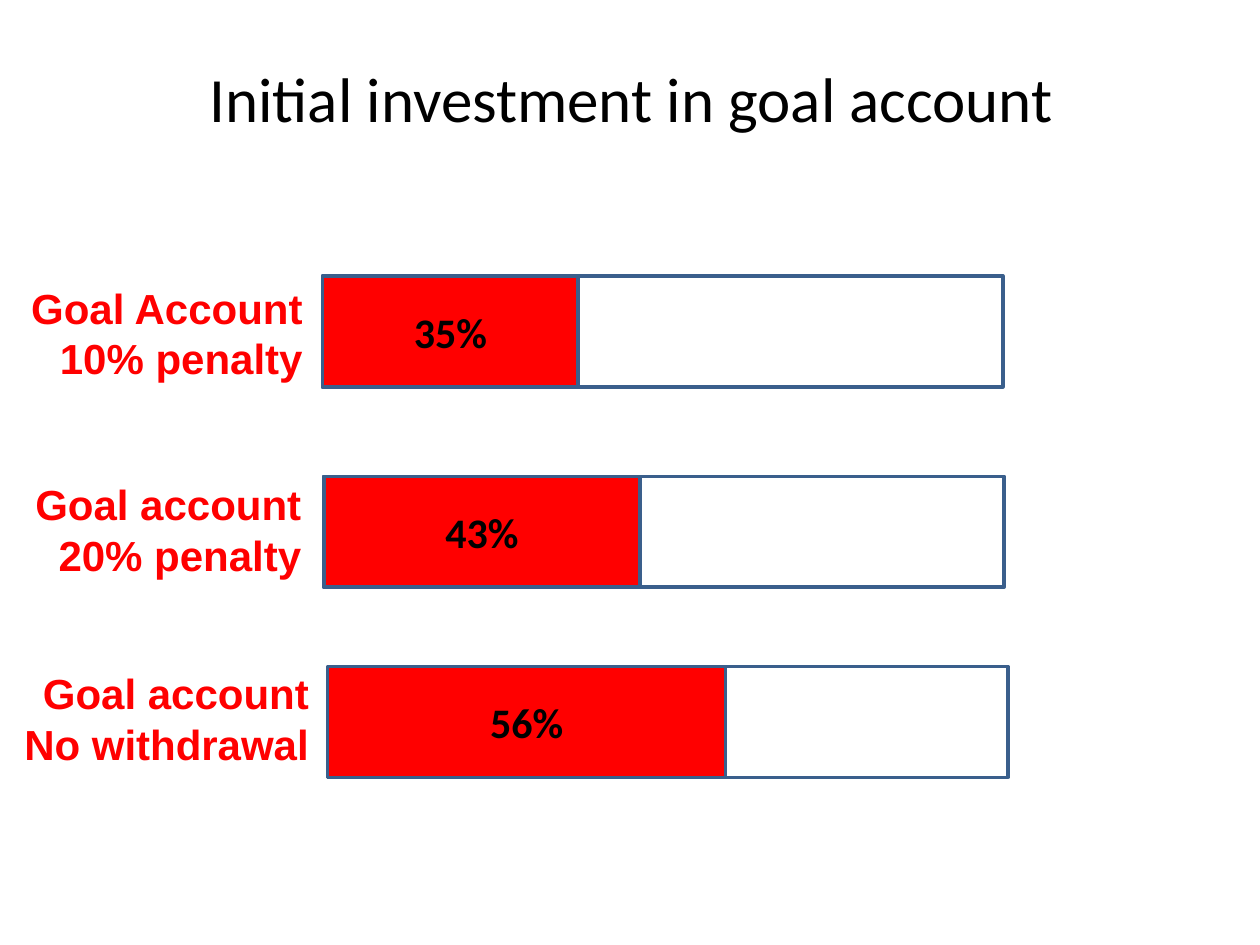
from pptx import Presentation
from pptx.dml.color import RGBColor
from pptx.enum.shapes import MSO_SHAPE as Shape
from pptx.enum.text import MSO_ANCHOR as Anchor, PP_ALIGN as Align
from pptx.util import Inches, Pt

BLACK = RGBColor(0x00, 0x00, 0x00)
RED = RGBColor(0xFF, 0x00, 0x00)
OUTLINE = RGBColor(0x3A, 0x5F, 0x8C)

BAR_WIDTH, BAR_HEIGHT = 5.4, 0.88
LABEL_HEIGHT = 0.91

TITLE_FONT = {"name": "Calibri", "size": Pt(36), "bold": False}
LABEL_FONT = {"name": "Arial", "size": Pt(24), "bold": True}
SHARE_FONT = {"name": "Calibri", "size": Pt(24), "bold": True}

# label lines, label (left, top, width), bar (left, top), share, share width
ACCOUNTS = [
    (["Goal Account", "10% penalty"], (-0.21, 2.19, 2.71), (2.56, 2.19), "35%", 2.03),
    (["Goal account", "20% penalty"], (0.16, 3.75, 2.33), (2.57, 3.78), "43%", 2.51),
    (["Goal account", "No withdrawal"], (0.07, 5.25, 2.48), (2.6, 5.29), "56%", 3.16),
]


def write(frame, lines, font_format, color, align, anchor):
    frame.word_wrap = True
    frame.vertical_anchor = anchor
    for index, line in enumerate(lines):
        paragraph = frame.add_paragraph() if index else frame.paragraphs[0]
        paragraph.alignment = align
        run = paragraph.add_run()
        run.text = line
        for attribute, value in font_format.items():
            setattr(run.font, attribute, value)
        run.font.color.rgb = color


def add_text(slide, box, *text_format):
    frame = slide.shapes.add_textbox(*map(Inches, box)).text_frame
    write(frame, *text_format)


def add_bar(slide, left, top, width, fill=None):
    """Add an outlined bar, hollow unless a fill colour is given."""
    bar = slide.shapes.add_shape(
        Shape.RECTANGLE, *map(Inches, (left, top, width, BAR_HEIGHT)))
    bar.shadow.inherit = False
    bar.line.color.rgb = OUTLINE
    bar.line.width = Pt(2)
    if fill is None:
        bar.fill.background()
    else:
        bar.fill.solid()
        bar.fill.fore_color.rgb = fill
    return bar


def add_account(slide, label, label_box, bar_at, share, share_width):
    add_text(slide, (*label_box, LABEL_HEIGHT), label, LABEL_FONT, RED,
             Align.RIGHT, Anchor.TOP)
    add_bar(slide, *bar_at, BAR_WIDTH)
    share_bar = add_bar(slide, *bar_at, share_width, RED)
    write(share_bar.text_frame, [share], SHARE_FONT, BLACK,
          Align.CENTER, Anchor.MIDDLE)


def main():
    presentation = Presentation()
    presentation.slide_width = Inches(10)
    presentation.slide_height = Inches(7.5)
    slide = presentation.slides.add_slide(presentation.slide_layouts[6])
    add_text(slide, (0.24, 0.15, 9.54, 1.25), ["Initial investment in goal account"],
             TITLE_FONT, BLACK, Align.CENTER, Anchor.MIDDLE)
    for account in ACCOUNTS:
        add_account(slide, *account)
    presentation.save("out.pptx")


if __name__ == "__main__":
    main()
